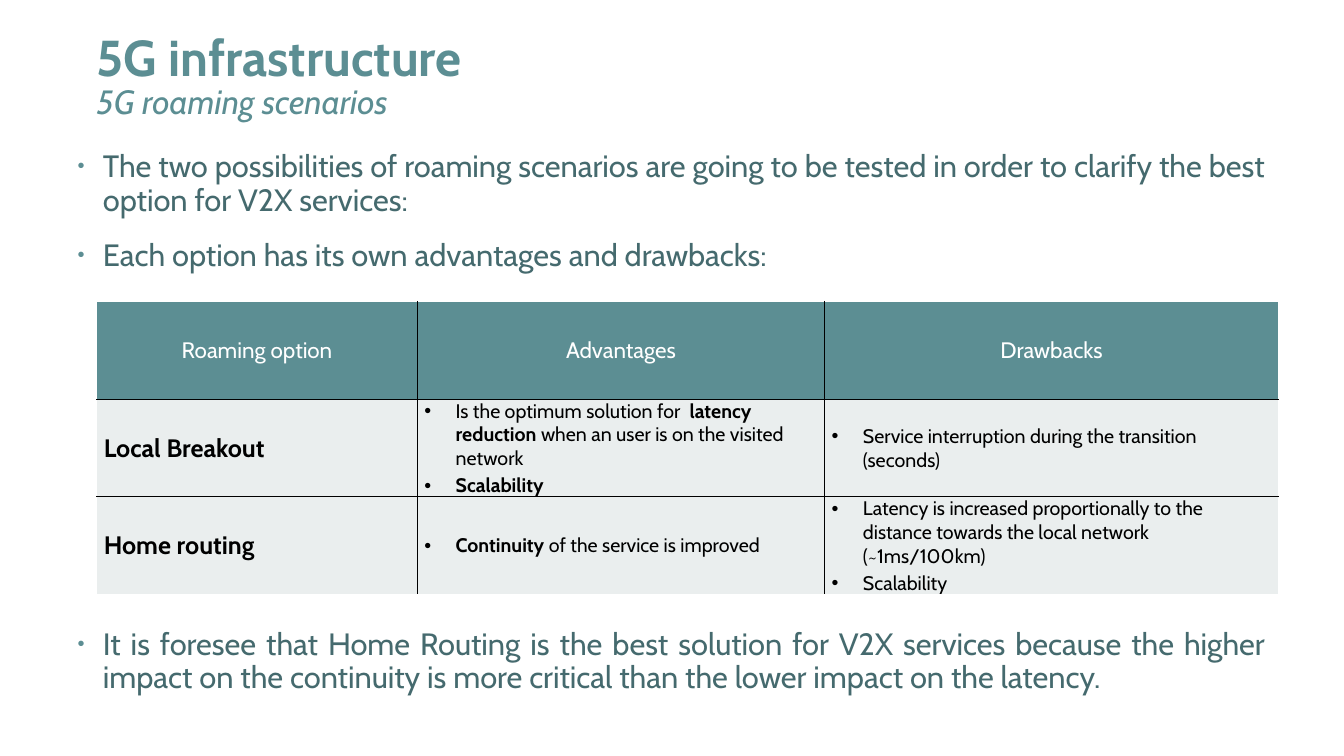
from lxml import etree
from pptx import Presentation
from pptx import util as u
from pptx.dml.color import RGBColor
from pptx.enum import text
from pptx.oxml import ns

COLORS = {
    "teal": "5C8E93",
    "body": "456A6E",
    "pale": "EAEEEE",
    "white": "FFFFFF",
    "black": "000000",
}
FONT = "Cabin"
LEFT, CENTER, JUSTIFY = (
    text.PP_ALIGN.LEFT, text.PP_ALIGN.CENTER, text.PP_ALIGN.JUSTIFY)
HEADERS = ["Roaming option", "Advantages", "Drawbacks"]
OPTIONS = [
    ("Local Breakout",
     [[("Is the optimum solution for  ", False), ("latency reduction", True),
       (" when an user is on the visited network", False)],
      [("Scalability", True)]],
     [[("Service interruption during the transition (seconds)", False)]]),
    ("Home routing",
     [[("Continuity", True), (" of the service is improved", False)]],
     [[("Latency is increased proportionally to the distance towards "
        "the local network (~1ms/100km)", False)],
      [("Scalability", False)]]),
]


def rgb(name):
    return RGBColor.from_string(COLORS[name])


def sub(parent, tag, **attrs):
    return etree.SubElement(parent, ns.qn(tag), attrs)


def add_bullet(p, indent, color=None, percent=100):
    pPr = p._p.get_or_add_pPr()
    pPr.set("marL", str(u.Inches(indent)))
    pPr.set("indent", str(-u.Inches(indent)))
    if color:
        sub(sub(pPr, "a:buClr"), "a:srgbClr", val=COLORS[color])
    sub(pPr, "a:buSzPct", val=str(percent * 1000))
    sub(pPr, "a:buFont", typeface="Arial")
    sub(pPr, "a:buChar", char="•")


def write(tf, runs, size=14, color="black", bold=False, italic=False,
          align=LEFT, spacing=1.0, before=0, after=0, bullet=None):
    first = len(tf.paragraphs) == 1 and not tf.paragraphs[0].runs
    p = tf.paragraphs[0] if first else tf.add_paragraph()
    if bullet:
        add_bullet(p, **bullet)
    p.alignment = align
    p.line_spacing = spacing
    p.space_before = u.Pt(0 if first else before)
    p.space_after = u.Pt(after)
    if isinstance(runs, str):
        runs = [(runs, bold)]
    for words, strong in runs:
        r = p.add_run()
        r.text = words
        r.font.name = FONT
        r.font.size = u.Pt(size)
        r.font.bold = strong
        r.font.italic = italic
        r.font.color.rgb = rgb(color)


def add_box(s, left, top, width, height):
    sp = s.shapes.add_textbox(*map(u.Inches, (left, top, width, height)))
    tf = sp.text_frame
    tf.word_wrap = True
    tf.margin_left = tf.margin_right = tf.margin_top = tf.margin_bottom = 0
    return tf


def add_title(s):
    tf = add_box(s, 0.96, 0.35, 10.36, 0.8)
    write(tf, "5G infrastructure", size=36, color="teal", bold=True, spacing=0.85)
    write(tf, "5G roaming scenarios", size=24, color="teal", italic=True,
          spacing=0.85)


def add_points(s, top, height, points):
    tf = add_box(s, 0.77, top, 11.78, height)
    for point in points:
        write(tf, point, size=22, color="body", align=JUSTIFY, spacing=0.9,
              before=10, after=6,
              bullet={"indent": 0.25, "color": "teal", "percent": 65})


def format_cell(cell, fill, inner_sides):
    tcPr = cell._tc.get_or_add_tcPr()
    for side in "LRTB":
        ln = sub(tcPr, "a:ln" + side, w=str(u.Pt(1)))
        color = "black" if side in inner_sides else "white"
        sub(sub(ln, "a:solidFill"), "a:srgbClr", val=COLORS[color])
    cell.fill.solid()
    cell.fill.fore_color.rgb = rgb(fill)
    cell.margin_left = cell.margin_right = u.Inches(0.07)
    cell.margin_top = cell.margin_bottom = 0
    cell.vertical_anchor = text.MSO_ANCHOR.MIDDLE


def add_options_table(s):
    widths, row_height = [3.18, 4.04, 4.5], 0.97
    rows, cols = len(OPTIONS) + 1, len(HEADERS)
    frame = s.shapes.add_table(rows, cols, u.Inches(0.96), u.Inches(2.99),
                               u.Inches(sum(widths)),
                               u.Inches(row_height * rows))
    table = frame.table
    table.horz_banding = False
    for column, width in zip(table.columns, widths):
        column.width = u.Inches(width)
    for i, row in enumerate(table.rows):
        row.height = u.Inches(row_height)
        for j, cell in enumerate(row.cells):
            inner = {"L": j > 0, "R": j < cols - 1,
                     "T": i > 0, "B": i < rows - 1}
            format_cell(cell, "pale" if i else "teal",
                        [side for side in inner if inner[side]])
    for j, header in enumerate(HEADERS):
        write(table.cell(0, j).text_frame, header, size=16, color="white",
              align=CENTER, after=2)
    for i, (option, *lists) in enumerate(OPTIONS, 1):
        write(table.cell(i, 0).text_frame, option, size=18, bold=True, after=2)
        for j, items in enumerate(lists, 1):
            for item in items:
                write(table.cell(i, j).text_frame, item, after=2,
                      bullet={"indent": 0.31})


def main():
    prs = Presentation()
    prs.slide_width, prs.slide_height = u.Inches(13.33), u.Inches(7.5)
    s = prs.slides.add_slide(prs.slide_layouts[6])
    add_title(s)
    add_points(s, 1.5, 1.3, [
        "The two possibilities of roaming scenarios are going to be tested "
        "in order to clarify the best option for V2X services:",
        "Each option has its own advantages and drawbacks:",
    ])
    add_options_table(s)
    add_points(s, 6.24, 0.8, [
        "It is foresee that Home Routing is the best solution for V2X services "
        "because the higher impact on the continuity is more critical than "
        "the lower impact on the latency.",
    ])
    prs.save("out.pptx")


if __name__ == "__main__":
    main()
